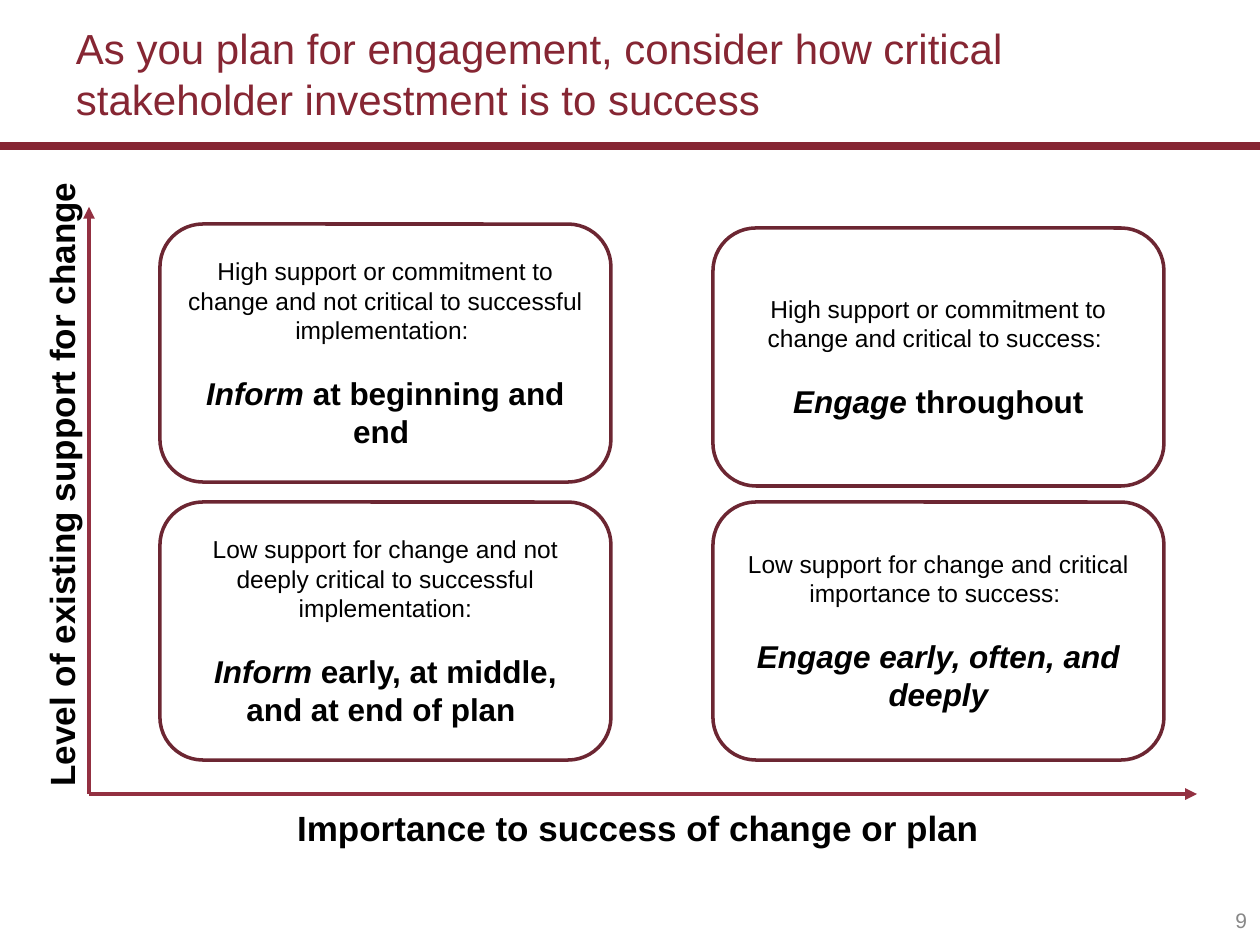
from lxml.etree import SubElement
from pptx import Presentation
from pptx.dml.color import RGBColor
from pptx.enum.shapes import MSO_CONNECTOR as Connector, MSO_SHAPE as Shape
from pptx.enum.text import MSO_ANCHOR as Anchor, PP_ALIGN as Align
from pptx.oxml.ns import qn
from pptx.util import Emu, Pt

# Content
TITLE = "As you plan for engagement, consider how critical stakeholder investment is to success"
X_LABEL = "Importance to success of change or plan "
Y_LABEL = "Level of existing support for change"
PAGE_NUMBER = "9"
# Column, top, situation, emphasised action, rest of the action
QUADRANTS = [
    (0, 224, "High support or commitment to change and not critical to successful implementation: ",
     "Inform ", "at beginning and end "),
    (1, 228, "High support or commitment to change and critical to success: ",
     "Engage", " throughout"),
    (0, 502, "Low support for change and not deeply critical to successful implementation:",
     "Inform ", "early, at middle, and at end of plan "),
    (1, 502, "Low support for change and critical importance to success: ",
     "Engage early, often, and deeply", ""),
]

# Theme and geometry, in px
THEME = {
    "font": "Arial", "text": "000000", "title": "862633", "axis": "933041",
    "border": "6C2632", "muted": "888888",
    "title_size": 24, "label_size": 20, "action_size": 18, "body_size": 14, "number_size": 12,
}
SLIDE_WIDTH, SLIDE_HEIGHT = 1260, 945
RULE_Y = 146
ORIGIN_X, ORIGIN_Y = 89, 794
AXIS_RIGHT, AXIS_TOP = 1197, 207
COLUMN_LEFTS = (160, 713)
BOX_WIDTH, BOX_HEIGHT = 451, 258


def px(length):
    return Emu(round(length * 914400 / 126))


def color(name):
    return RGBColor.from_string(THEME[name])


def style(paragraph, size, color_name="text", bold=False, align=Align.CENTER):
    paragraph.alignment = align
    font = paragraph.font
    font.name, font.size, font.bold = THEME["font"], Pt(THEME[size]), bold
    font.color.rgb = color(color_name)


def set_frame(frame, anchor, inset_x, inset_y):
    frame.word_wrap = True
    frame.vertical_anchor = anchor
    frame.margin_left = frame.margin_right = px(inset_x)
    frame.margin_top = frame.margin_bottom = px(inset_y)


def add_text(slide, box, text, size, anchor=Anchor.TOP, inset=(0, 0), **look):
    shape = slide.shapes.add_textbox(*map(px, box))
    set_frame(shape.text_frame, anchor, *inset)
    paragraph = shape.text_frame.paragraphs[0]
    paragraph.text = text
    style(paragraph, size, **look)
    return shape


def add_line(slide, start, end, color_name, width, arrow=False):
    line = slide.shapes.add_connector(Connector.STRAIGHT, *map(px, start + end))
    line.line.color.rgb = color(color_name)
    line.line.width = Pt(width)
    if arrow:
        SubElement(line.line._get_or_add_ln(), qn("a:tailEnd"), type="triangle")
    SubElement(line._element.spPr, qn("a:effectLst"))


def add_quadrant(slide, column, top, situation, emphasis, rest):
    box = (COLUMN_LEFTS[column], top, BOX_WIDTH, BOX_HEIGHT)
    shape = slide.shapes.add_shape(Shape.FLOWCHART_ALTERNATE_PROCESS, *map(px, box))
    shape.shadow.inherit = False
    shape.fill.background()
    shape.line.color.rgb = color("border")
    shape.line.width = Pt(2)
    frame = shape.text_frame
    set_frame(frame, Anchor.MIDDLE, 13, 6)

    paragraph = frame.paragraphs[0]
    paragraph.text = situation
    style(paragraph, "body_size")

    paragraph = frame.add_paragraph()
    paragraph.space_before = Pt(17)
    style(paragraph, "action_size", bold=True)
    for text, italic in ((emphasis, True), (rest, False)):
        if text:
            run = paragraph.add_run()
            run.text = text
            run.font.italic = italic


def main():
    presentation = Presentation()
    presentation.slide_width, presentation.slide_height = px(SLIDE_WIDTH), px(SLIDE_HEIGHT)
    slide = presentation.slides.add_slide(presentation.slide_layouts[6])

    # Title, rule and page number
    add_line(slide, (0, RULE_Y), (SLIDE_WIDTH, RULE_Y), "title", 5)
    add_text(slide, (966, 895, 294, 50), PAGE_NUMBER, "number_size", Anchor.MIDDLE, (13, 6),
             color_name="muted", align=Align.RIGHT)
    add_text(slide, (63, 0, 1134, RULE_Y), TITLE, "title_size", Anchor.MIDDLE, (13, 13),
             color_name="title", align=Align.LEFT)

    # Axes and their labels
    origin = (ORIGIN_X, ORIGIN_Y)
    for end in ((AXIS_RIGHT, ORIGIN_Y), (ORIGIN_X, AXIS_TOP)):
        add_line(slide, origin, end, "axis", 2.25, arrow=True)
    add_text(slide, (217, 806, 852, 43), X_LABEL, "label_size", bold=True)
    y_label = add_text(slide, (-255, 460, 639, 49), Y_LABEL, "label_size", bold=True)
    y_label.rotation = 270

    # Quadrants
    for quadrant in QUADRANTS:
        add_quadrant(slide, *quadrant)

    presentation.save("out.pptx")


if __name__ == "__main__":
    main()
